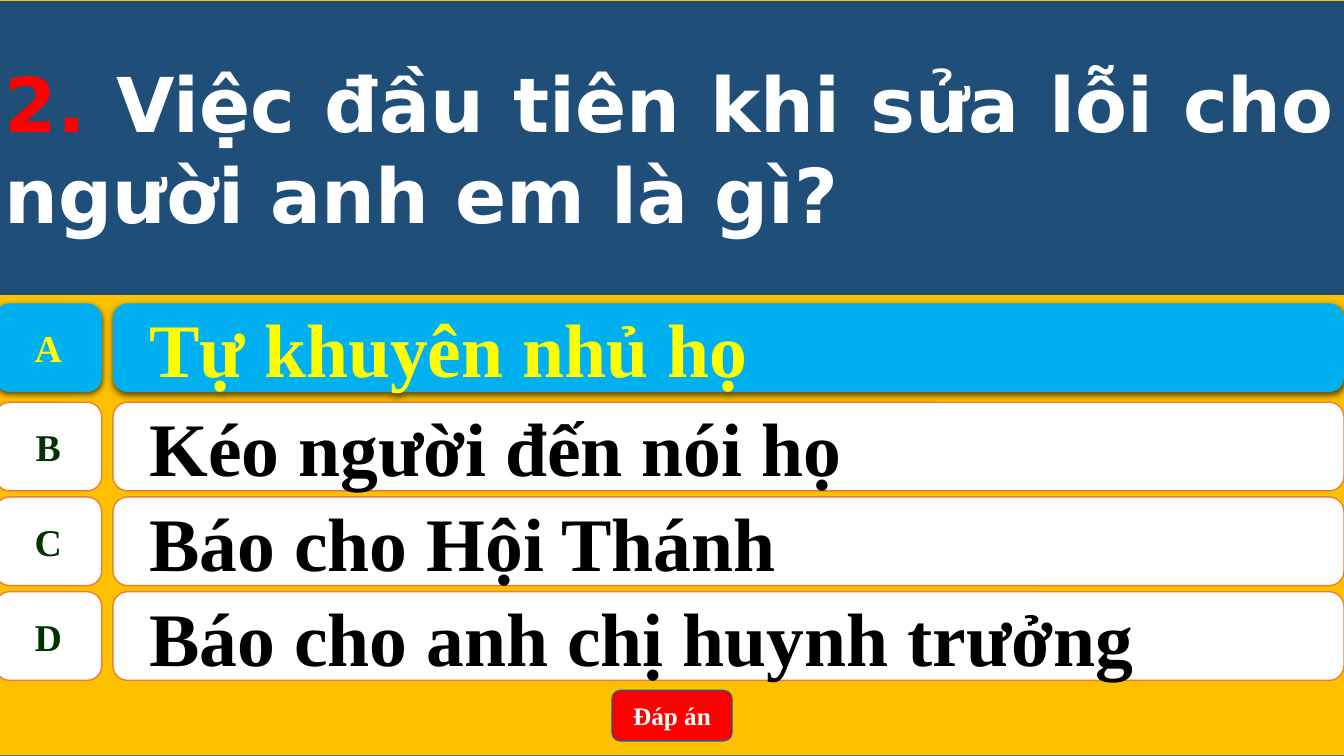
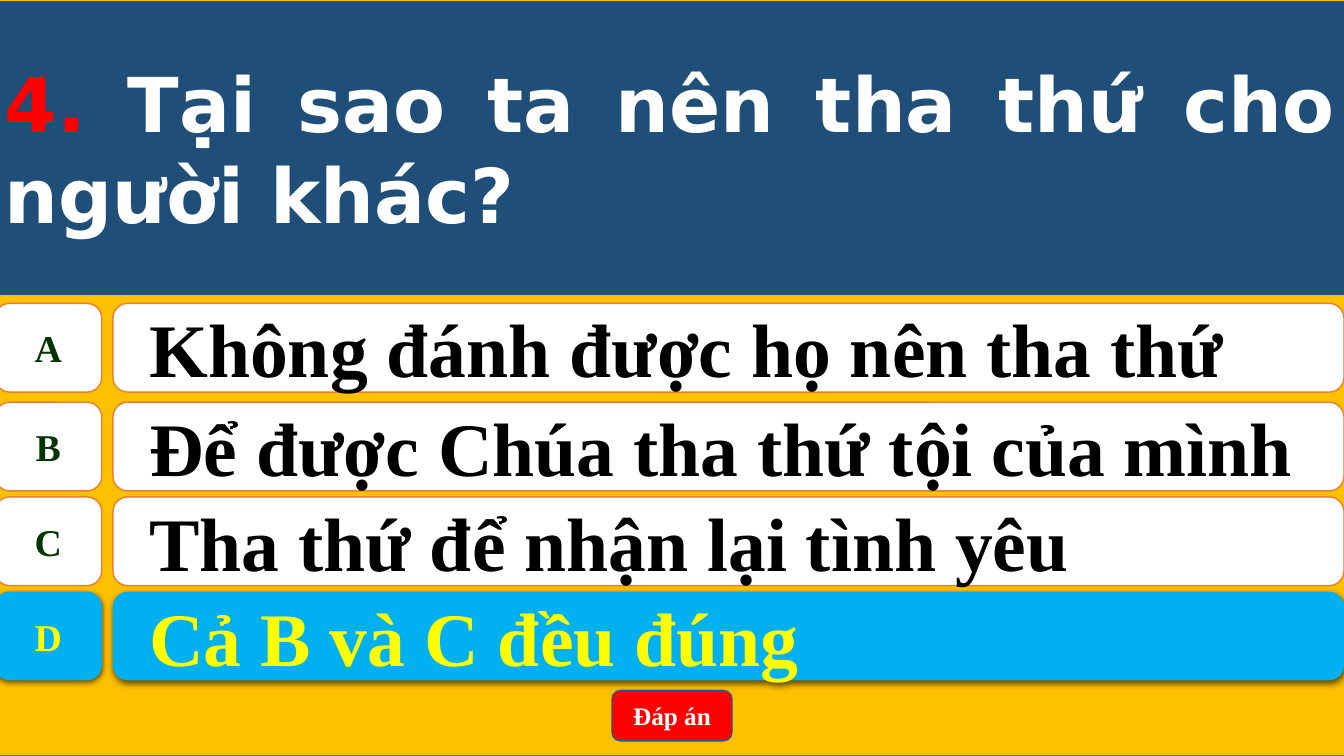
from lxml import etree
from pptx import Presentation
from pptx import util as u
from pptx.dml.color import RGBColor
from pptx.enum import shapes, text
from pptx.oxml.ns import qn

SERIF, SANS = "Times New Roman", "DejaVu Sans"
AMBER, NAVY, WHITE, BLACK = "FFC000", "1F4E79", "FFFFFF", "000000"
RED, ORANGE, SKY, YELLOW, GREEN = "FF0000", "ED7D31", "00B0F0", "FFFF00", "003300"
BACKDROP_LINE, BUTTON_LINE = "43739E", "325491"

LEFT, FULL_WIDTH = -0.05, 13.39
ROW_TOPS = (3.01, 3.99, 4.93, 5.87)
ROW_HEIGHT = 0.88
KIND = shapes.MSO_SHAPE
ALIGN = text.PP_ALIGN

QUESTIONS = [
    ("2. ", "Việc đầu tiên khi sửa lỗi cho người anh em là gì?",
     ["Tự khuyên nhủ họ", "Kéo người đến nói họ", "Báo cho Hội Thánh",
      "Báo cho anh chị huynh trưởng"], "A"),
    ("4. ", "Tại sao ta nên tha thứ cho người khác?",
     ["Không đánh được họ nên tha thứ", "Để được Chúa tha thứ tội của mình",
      "Tha thứ để nhận lại tình yêu", "Cả B và C đều đúng"], "D"),
]


def rgb(value):
    return RGBColor.from_string(value)


def add_box(slide, kind, left, top, width, height, fill, line=None, weight=1):
    box = slide.shapes.add_shape(kind, *map(u.Inches, (left, top, width, height)))
    box.fill.solid()
    box.fill.fore_color.rgb = rgb(fill)
    if line:
        box.line.color.rgb = rgb(line)
        box.line.width = u.Pt(weight)
    else:
        box.line.fill.background()
    box.shadow.inherit = False
    return box


def write(box, *runs, size, font=SERIF, align=ALIGN.CENTER, wrap=True):
    """Fill the box with one bold paragraph of (wording, colour) runs."""
    frame = box.text_frame
    frame.word_wrap = wrap
    frame.vertical_anchor = text.MSO_ANCHOR.MIDDLE
    paragraph = frame.paragraphs[0]
    paragraph.alignment = align
    for wording, colour in runs:
        run = paragraph.add_run()
        run.text = wording
        run.font.name, run.font.size, run.font.bold = font, u.Pt(size), True
        run.font.color.rgb = rgb(colour)
    return paragraph


def hang(paragraph, margin, indent):
    paragraph.level = 1
    properties = paragraph._p.get_or_add_pPr()
    properties.set("marL", str(u.Inches(margin)))
    properties.set("indent", str(u.Inches(indent)))


def drop_shadow(box):
    effects = box._element.spPr.find(qn("a:effectLst"))
    shadow = etree.SubElement(effects, qn("a:outerShdw"), blurRad=str(u.Pt(4.5)),
                              dist=str(u.Pt(1.5)), dir="5400000",
                              algn="ctr", rotWithShape="0")
    colour = etree.SubElement(shadow, qn("a:srgbClr"), val=BLACK)
    etree.SubElement(colour, qn("a:alpha"), val="63000")


def add_answer(slide, top, letter, answer, correct):
    fill, line = (SKY, None) if correct else (WHITE, ORANGE)
    letter_colour, answer_colour = (YELLOW, YELLOW) if correct else (GREEN, BLACK)
    tag = add_box(slide, KIND.FLOWCHART_ALTERNATE_PROCESS,
                  LEFT, top, 1.06, ROW_HEIGHT, fill, line)
    write(tag, (letter, letter_colour), size=27, wrap=False)
    bar = add_box(slide, KIND.ROUNDED_RECTANGLE,
                  1.12, top, 12.21, ROW_HEIGHT, fill, line)
    hang(write(bar, (answer, answer_colour), size=54, align=ALIGN.LEFT), 0.5, -0.28)
    if correct:
        drop_shadow(tag)
        drop_shadow(bar)


def add_question_slide(deck, number, question, answers, correct_letter):
    slide = deck.slides.add_slide(deck.slide_layouts[6])
    add_box(slide, KIND.RECTANGLE, LEFT, 0, FULL_WIDTH, 7.5, AMBER, BACKDROP_LINE)
    for top, letter, answer in zip(ROW_TOPS, "ABCD", answers):
        add_answer(slide, top, letter, answer, letter == correct_letter)
    button = add_box(slide, KIND.ROUNDED_RECTANGLE, 6.07, 6.85, 1.19, 0.5,
                     RED, BUTTON_LINE)
    write(button, ("Đáp án", WHITE), size=18)
    band = add_box(slide, KIND.RECTANGLE, LEFT, 0, FULL_WIDTH, 2.93, NAVY, AMBER, 0.5)
    write(band, (number, RED), (question, WHITE),
          size=54, font=SANS, align=ALIGN.JUSTIFY)


def main():
    deck = Presentation()
    deck.slide_width, deck.slide_height = u.Inches(13.33), u.Inches(7.5)
    for entry in QUESTIONS:
        add_question_slide(deck, *entry)
    deck.save("out.pptx")


if __name__ == "__main__":
    main()
